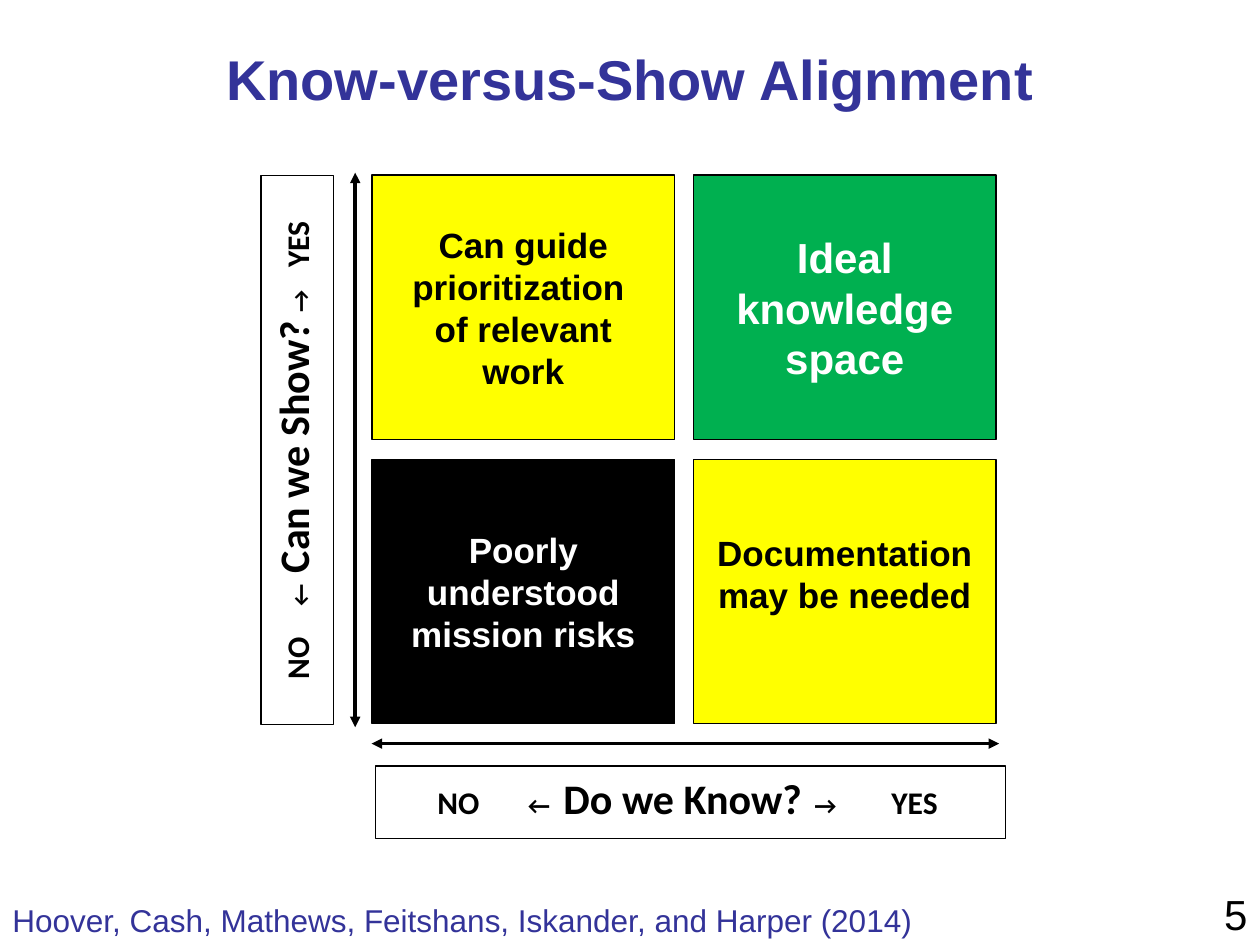
from lxml.etree import SubElement
from pptx import Presentation
from pptx.dml.color import RGBColor
from pptx.enum.shapes import MSO_CONNECTOR, MSO_SHAPE
from pptx.enum.text import MSO_ANCHOR, PP_ALIGN
from pptx.oxml.ns import qn
from pptx.util import Cm, Pt

BLACK, WHITE, YELLOW, GREEN, NAVY = "000000", "FFFFFF", "FFFF00", "00B050", "333399"

presentation = Presentation()
presentation.slide_width, presentation.slide_height = Cm(25.4), Cm(19.05)
slide = presentation.slides.add_slide(presentation.slide_layouts[6])


def paint(fill, color):
    fill.solid()
    fill.fore_color.rgb = RGBColor.from_string(color)


def add_block(place, lines, color, fill=None, font="Arial", bold=True,
              align=PP_ALIGN.CENTER, **frame_format):
    """Add a text box, or a bordered rectangle if fill is given.

    Each line is a list of (text, size) runs and becomes a paragraph.
    """
    place = [Cm(length) for length in place]
    if fill:
        shape = slide.shapes.add_shape(MSO_SHAPE.RECTANGLE, *place)
        shape.shadow.inherit = False
        paint(shape.fill, fill)
        paint(shape.line.fill, BLACK)
        shape.line.width = Pt(0.75)
    else:
        shape = slide.shapes.add_textbox(*place)
    frame = shape.text_frame
    for name, value in ({"word_wrap": True} | frame_format).items():
        setattr(frame, name, value)
    for number, line in enumerate(lines):
        paragraph = frame.add_paragraph() if number else frame.paragraphs[0]
        paragraph.alignment = align
        for text, size in line:
            run = paragraph.add_run()
            run.text = text
            for name, value in {"name": font, "size": Pt(size), "bold": bold}.items():
                setattr(run.font, name, value)
            paint(run.font.fill, color)
    return shape


# Double-headed axis arrows
for ends in [(7.16, 3.48, 7.16, 14.66), (7.49, 14.99, 20.14, 14.99)]:
    arrow = slide.shapes.add_connector(MSO_CONNECTOR.STRAIGHT, *[Cm(end) for end in ends])
    paint(arrow.line.fill, BLACK)
    arrow.line.width = Pt(2)
    line_xml = arrow.line._get_or_add_ln()
    for tag in ("a:headEnd", "a:tailEnd"):
        SubElement(line_xml, qn(tag), type="triangle")
    SubElement(arrow._element.spPr, qn("a:effectLst"))

# Quadrants: column, row, lines, size, text colour, fill, inset, bottom inset
quadrants = [
    (1, 0, ["Ideal", "knowledge", "space"], 24, WHITE, GREEN, 0.13, 0.13),
    (1, 1, ["Documentation", "may be needed"], 20, BLACK, YELLOW, 0.25, 0.86),
    (0, 0, ["Can guide prioritization ", "of relevant", "work"], 20, BLACK, YELLOW, 0.13, 0.13),
    (0, 1, ["Poorly understood mission risks"], 20, WHITE, BLACK, 0.25, 0.13),
]
for column, row, lines, size, color, fill, inset, bottom in quadrants:
    add_block((7.5 + 6.48 * column, 3.53 + 5.73 * row, 6.1, 5.33),
              [[(line, size)] for line in lines], color, fill,
              vertical_anchor=MSO_ANCHOR.MIDDLE, margin_left=Cm(inset),
              margin_right=Cm(inset), margin_top=Cm(0.13), margin_bottom=Cm(bottom))

# Axis labels, spaced by tab stops
axes = [
    ((7.57, 15.44, 12.7, 1.47), 0, "Do we Know?", (1.0, 2.82, 3.54, 8.6, 10.15)),
    ((0.46, 8.33, 11.07, 1.47), 270, "Can we Show?", (0.65, 2.12, 2.8, 8.05, 8.95)),
]
for place, rotation, question, stops in axes:
    words = [("NO", 18), ("←", 14), (question, 24), ("→", 14), ("YES", 18)]
    label = add_block(place, [[("\t" + word, size) for word, size in words]], BLACK, WHITE,
                      "Calibri", align=PP_ALIGN.LEFT, vertical_anchor=MSO_ANCHOR.TOP)
    label.rotation = rotation
    properties = label.text_frame.paragraphs[0]._p.get_or_add_pPr()
    tab_list = SubElement(properties, qn("a:tabLst"))
    for stop in stops:
        SubElement(tab_list, qn("a:tab"), pos=str(Cm(stop)), algn="l")

# Title, page number and source
title = add_block((0, 1.07, 25.4, 1.27), [[("Know-versus-Show Alignment", 32)]], NAVY,
                  vertical_anchor=MSO_ANCHOR.MIDDLE)
title.text_frame.paragraphs[0].line_spacing = 0.8
add_block((19.48, 17.78, 5.92, 1.27), [[("5", 24)]], BLACK, bold=False, align=PP_ALIGN.RIGHT)
add_block((0, 18.03, 19.51, 1.02),
          [[("Hoover, Cash, Mathews, Feitshans, Iskander, and Harper (2014)", 18)]],
          NAVY, bold=False, align=PP_ALIGN.LEFT, word_wrap=False)

presentation.save("out.pptx")
